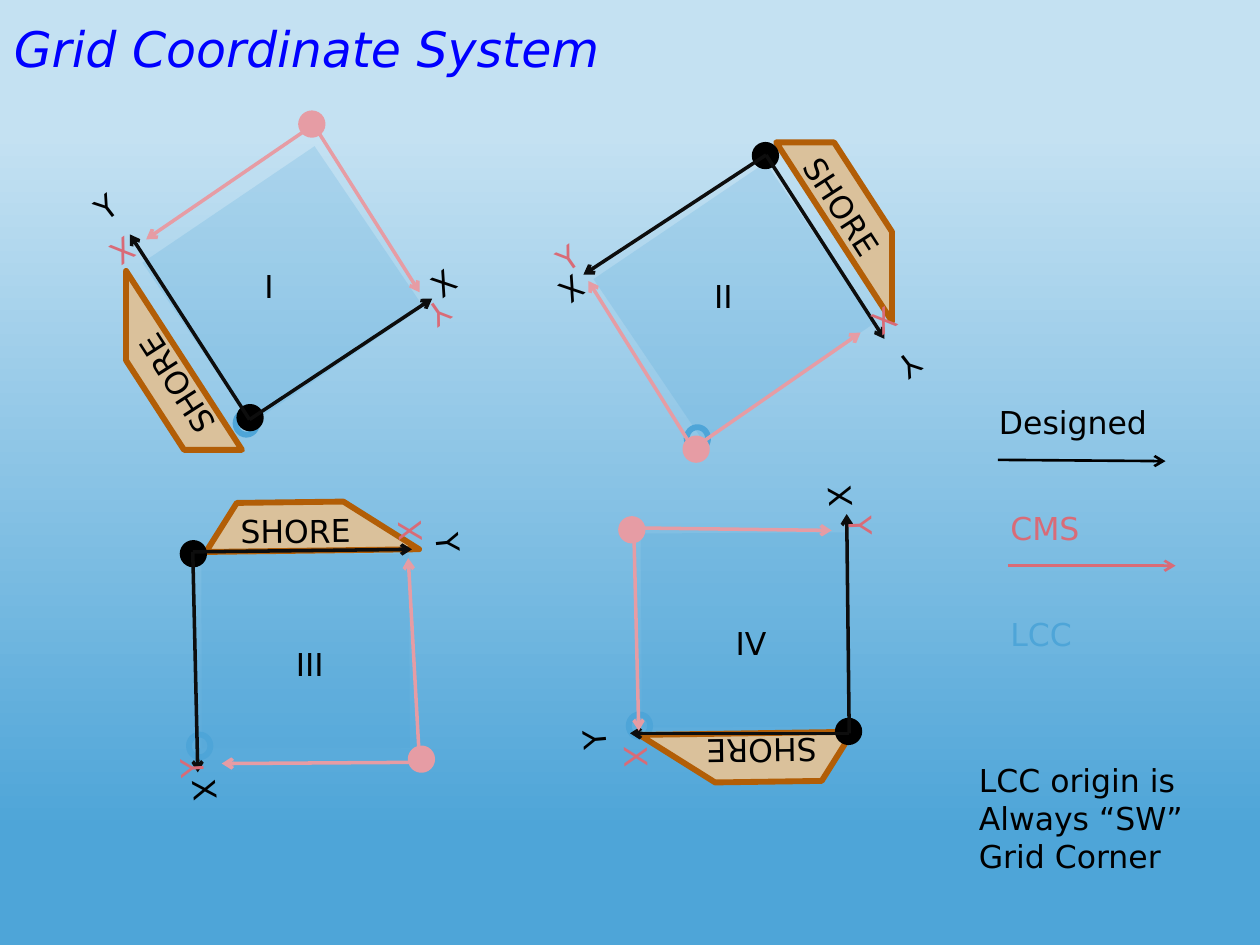
from dataclasses import dataclass

from lxml import etree
from pptx import Presentation
from pptx import util as u
from pptx.dml import color
from pptx.enum import shapes, text
from pptx.oxml import ns


@dataclass(frozen=True)
class Theme:
    font: str = "DejaVu Sans"
    title_size: int = 28
    body_size: int = 18
    title: str = "0000FF"
    sky: str = "C4E1F2"
    water: str = "4EA5D8"
    sand: str = "DAC19B"
    bank: str = "B25E07"
    black: str = "000000"
    axis: str = "0D0D0D"
    pink: str = "E69CA4"
    rose: str = "D96B77"
    outline: float = 3.35
    axis_width: float = 2
    key_width: float = 1.5


@dataclass(frozen=True)
class Axes:
    dot: tuple
    start: tuple
    y_end: tuple
    x_end: tuple
    y_label: tuple
    x_label: tuple
    turn: float


@dataclass(frozen=True)
class Grid:
    name: str
    name_box: tuple
    cell: tuple
    cell_turn: float
    ring: tuple
    shore: tuple
    shore_turn: float
    shore_label: tuple
    label_turn: float
    designed: Axes
    cms: Axes


GRIDS = [
    Grid("I", (2, 2.07, 0.31, 0.4), (1.42, 1.49), 325.9, (1.87, 3.27),
         (1, 2.15), 180, (0.48, 2.64), 237.3,
         Axes((1.9, 3.23), (1.98, 3.33), (1.03, 1.86), (3.43, 2.37), (0.67, 1.4), (3.34, 2.01), 322.4),
         Axes((2.39, 0.9), (2.49, 0.99), (3.33, 2.32), (1.16, 1.9), (3.22, 2.32), (0.72, 1.82), 145.2)),
    Grid("II", (5.57, 2.15, 0.42, 0.4), (5, 1.62), 325.9, (5.45, 3.39),
         (6.16, 1.13), 0, (6.03, 1.65), 57.3,
         Axes((5.99, 1.15), (6.08, 1.23), (7.02, 2.69), (4.63, 2.18), (6.92, 2.69), (4.25, 2.08), 142.4),
         Axes((5.44, 3.48), (5.5, 3.56), (4.67, 2.23), (6.83, 2.64), (4.32, 1.82), (6.82, 2.32), 325.2)),
    Grid("III", (2.25, 5.07, 0.52, 0.4), (1.6, 4.4), 359.8, (1.5, 5.83),
         (2.02, 3.66), 302.2, (1.81, 4.01), 359.5,
         Axes((1.45, 4.31), (1.53, 4.38), (3.27, 4.36), (1.57, 6.13), (3.3, 4.14), (1.37, 6.09), 84.2),
         Axes((3.26, 5.94), (3.33, 6.05), (1.76, 6.06), (3.24, 4.43), (1.29, 5.85), (3.02, 3.98), 266.7)),
    Grid("IV", (5.74, 4.9, 0.48, 0.4), (5.09, 4.23), 359.7, (4.99, 5.67),
         (5.46, 5.11), 122.1, (5.01, 5.77), 179.3,
         Axes((6.65, 5.72), (6.74, 5.82), (5, 5.82), (6.72, 4.08), (4.5, 5.58), (6.45, 3.66), 265),
         Axes((4.93, 4.12), (5.03, 4.19), (6.6, 4.21), (5.07, 5.8), (6.61, 4.02), (4.83, 5.85), 88.2)),
]


def cm(*inches):
    return [u.Cm(value * 2.54) for value in inches]


def rgb(code):
    return color.RGBColor.from_string(code)


class SlideBuilder:
    def __init__(self, slide, theme):
        self.slide = slide
        self.theme = theme

    def background(self):
        fill = self.slide.background.fill
        fill.gradient()
        fill.gradient_angle = 270
        stops = ((0.14, self.theme.sky), (0.88, self.theme.water))
        for stop, (position, code) in zip(fill.gradient_stops, stops):
            stop.position = position
            stop.color.rgb = rgb(code)

    def run(self, paragraph, words, size, code, italic=False):
        run = paragraph.add_run()
        run.text = words
        run.font.name = self.theme.font
        run.font.size = u.Pt(size)
        run.font.italic = italic
        run.font.color.rgb = rgb(code)

    def title(self, words):
        shape = self.slide.shapes.title
        shape.left, shape.top, shape.width, shape.height = cm(0.01, 0.07, 8.95, 0.59)
        frame = shape.text_frame
        frame.auto_size = text.MSO_AUTO_SIZE.NONE
        frame.vertical_anchor = text.MSO_ANCHOR.BOTTOM
        paragraph = frame.paragraphs[0]
        paragraph.alignment = text.PP_ALIGN.LEFT
        self.run(paragraph, words, self.theme.title_size, self.theme.title, italic=True)

    def label(self, lines, box, code, turn=0, wrap=False):
        shape = self.slide.shapes.add_textbox(*cm(*box))
        shape.rotation = turn
        frame = shape.text_frame
        frame.word_wrap = wrap
        frame.auto_size = text.MSO_AUTO_SIZE.SHAPE_TO_FIT_TEXT
        for index, line in enumerate(lines):
            paragraph = frame.add_paragraph() if index else frame.paragraphs[0]
            self.run(paragraph, line, self.theme.body_size, code)

    def shape(self, kind, box, fill=None, line=None, turn=0, alpha=None, flip=False):
        shape = self.slide.shapes.add_shape(kind, *cm(*box))
        shape.shadow.inherit = False
        shape.rotation = turn
        if fill:
            shape.fill.solid()
            shape.fill.fore_color.rgb = rgb(fill)
        else:
            shape.fill.background()
        if line:
            shape.line.color.rgb = rgb(line)
            shape.line.width = u.Pt(self.theme.outline)
        else:
            shape.line.fill.background()
        if alpha:
            tint = shape._element.spPr.find(ns.qn("a:solidFill"))[0]
            etree.SubElement(tint, ns.qn("a:alpha")).set("val", str(alpha * 1000))
        if flip:
            shape._element.spPr.xfrm.set("flipH", "1")

    def arrow(self, start, end, code, width):
        connector = self.slide.shapes.add_connector(
            shapes.MSO_CONNECTOR.STRAIGHT, *cm(*start, *end))
        connector.line.color.rgb = rgb(code)
        connector.line.width = u.Pt(width)
        line = connector.line._get_or_add_ln()
        etree.SubElement(line, ns.qn("a:tailEnd")).set("type", "arrow")
        etree.SubElement(connector._element.spPr, ns.qn("a:effectLst"))

    def axes(self, axes, dot_code, line_code, label_code, label_size):
        oval = shapes.MSO_SHAPE.OVAL
        self.shape(oval, (*axes.dot, 0.17, 0.17), dot_code, dot_code)
        for end in (axes.y_end, axes.x_end):
            self.arrow(axes.start, end, line_code, self.theme.axis_width)
        for letter, corner in (("Y", axes.y_label), ("X", axes.x_label)):
            self.label([letter], (*corner, *label_size), label_code, axes.turn, wrap=True)

    def grid(self, grid):
        theme, kinds = self.theme, shapes.MSO_SHAPE
        self.shape(kinds.RECTANGLE, (*grid.cell, 1.65, 1.54), theme.water,
                   turn=grid.cell_turn, alpha=20)
        self.shape(kinds.OVAL, (*grid.ring, 0.17, 0.18), line=theme.water)
        self.shape(kinds.DIAGONAL_STRIPE, (*grid.shore, 0.92, 1.42), theme.sand,
                   theme.bank, grid.shore_turn, flip=True)
        self.label(["SHORE"], (*grid.shore_label, 1.57, 0.4), theme.black,
                   grid.label_turn, wrap=True)
        self.axes(grid.designed, theme.black, theme.axis, theme.black, (0.47, 0.46))
        self.axes(grid.cms, theme.pink, theme.pink, theme.rose, (0.45, 0.4))
        self.label([grid.name], grid.name_box, theme.black)


def main():
    presentation = Presentation()
    presentation.slide_width, presentation.slide_height = cm(10, 7.5)
    slide = presentation.slides.add_slide(presentation.slide_layouts.get_by_name("Title Only"))
    theme = Theme()
    builder = SlideBuilder(slide, theme)
    builder.background()
    builder.title("Grid Coordinate System")
    for grid in GRIDS:
        builder.grid(grid)
    builder.label(["Designed"], (7.83, 3.15, 1.45, 0.4), theme.black)
    builder.arrow((7.92, 3.65), (9.25, 3.66), theme.black, theme.key_width)
    builder.label(["CMS"], (7.92, 3.99, 0.8, 0.4), theme.rose)
    builder.arrow((8, 4.49), (9.33, 4.49), theme.rose, theme.key_width)
    builder.label(["LCC"], (7.92, 4.83, 0.75, 0.4), theme.water)
    builder.label(["LCC origin is", "Always “SW”", "Grid Corner"],
                  (7.67, 5.99, 1.9, 1.01), theme.black)
    presentation.save("out.pptx")


if __name__ == "__main__":
    main()
